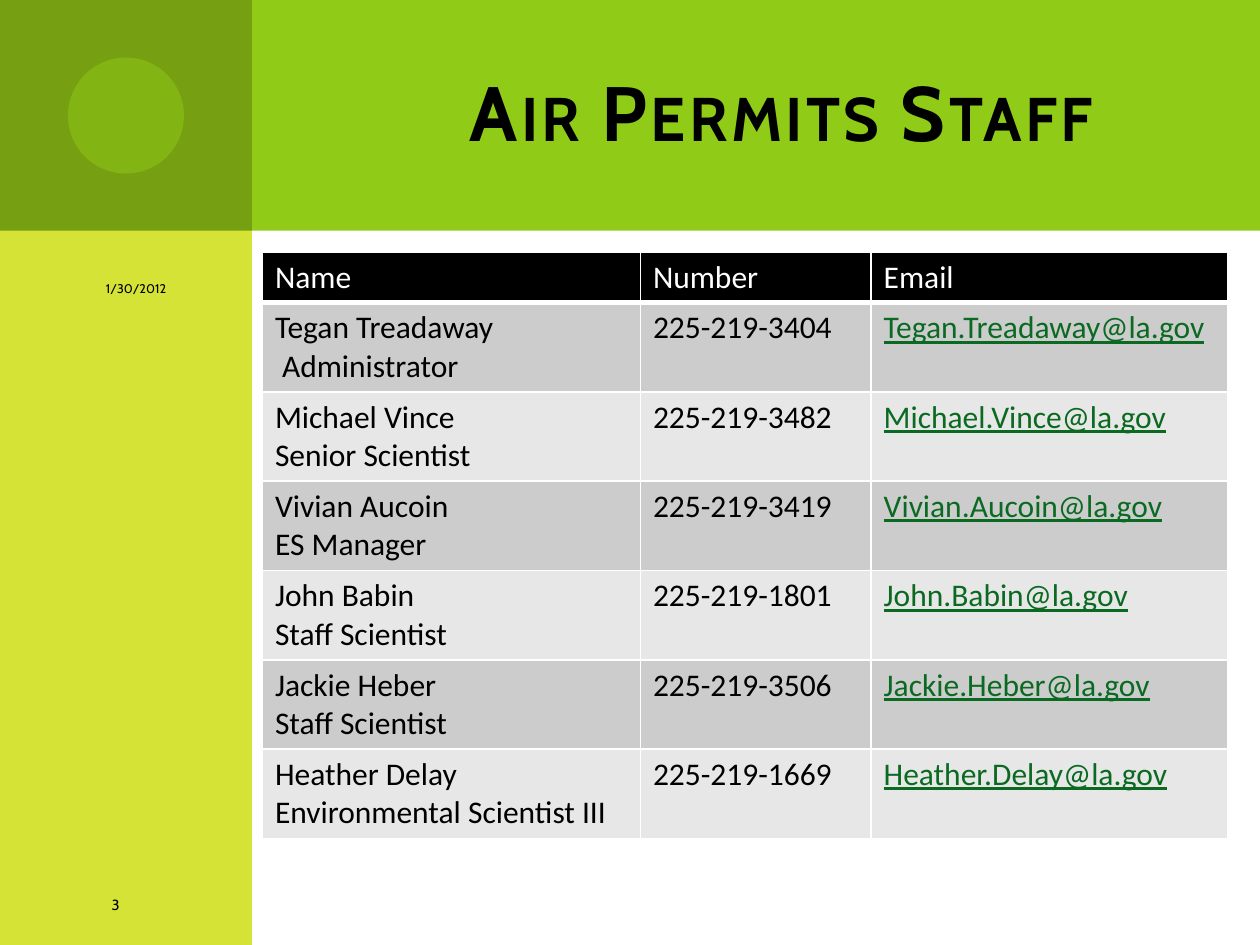
from typing import NamedTuple

from lxml import etree
from pptx import Presentation
from pptx.dml.color import RGBColor
from pptx.enum.shapes import MSO_SHAPE
from pptx.enum.text import MSO_ANCHOR, PP_ALIGN
from pptx.oxml.ns import qn
from pptx.util import Cm, Pt

RECTANGLE, OVAL = MSO_SHAPE.RECTANGLE, MSO_SHAPE.OVAL
LEFT, CENTER, RIGHT = PP_ALIGN.LEFT, PP_ALIGN.CENTER, PP_ALIGN.RIGHT
MIDDLE = MSO_ANCHOR.MIDDLE

BLACK, WHITE = "000000", "FFFFFF"
GREEN, DARK_GREEN, LIME = "8FCB17", "769F11", "D4E336"
EMAIL_GREEN = "0A6A21"
BAND_FILLS = ("CCCCCC", "E7E7E7")
COLUMN_WIDTHS = (7.62, 4.65, 7.19)
HEADER_HEIGHT, ROW_HEIGHT = 1.02, 1.8


class Panel(NamedTuple):
    kind: int
    left: float
    top: float
    width: float
    height: float
    color: str
    opacity: int = 100


class Person(NamedTuple):
    name: str
    role: str
    number: str
    email: str


PANELS = (
    Panel(RECTANGLE, 1.27, 0, 24.13, 4.65, GREEN),
    Panel(RECTANGLE, 0, 0, 5.08, 19.05, LIME),
    Panel(RECTANGLE, 0, 0, 5.08, 4.65, DARK_GREEN),
    Panel(OVAL, 1.37, 1.16, 2.34, 2.34, GREEN, 50),
)

STAFF = (
    Person("Tegan Treadaway", " Administrator", "225-219-3404", "Tegan.Treadaway@la.gov"),
    Person("Michael Vince", "Senior Scientist", "225-219-3482", "Michael.Vince@la.gov"),
    Person("Vivian Aucoin", "ES Manager", "225-219-3419", "Vivian.Aucoin@la.gov"),
    Person("John Babin", "Staff Scientist", "225-219-1801", "John.Babin@la.gov"),
    Person("Jackie Heber", "Staff Scientist", "225-219-3506", "Jackie.Heber@la.gov"),
    Person("Heather Delay", "Environmental Scientist III", "225-219-1669", "Heather.Delay@la.gov"),
)


def set_fill(fill, color: str) -> None:
    fill.solid()
    fill.fore_color.rgb = RGBColor.from_string(color)


def write_text(text_frame, text: str, *, font: str, size: float, color: str = BLACK,
               align=LEFT, bold: bool = False, underline: bool = False,
               small_caps: bool = False, spacing: float = 0) -> None:
    """Write one paragraph per line of text."""
    for index, line in enumerate(text.split("\n")):
        paragraph = text_frame.add_paragraph() if index else text_frame.paragraphs[0]
        paragraph.alignment = align
        run = paragraph.add_run()
        run.text = line
        run.font.name, run.font.size = font, Pt(size)
        run.font.bold, run.font.underline = bold, underline
        set_fill(run.font.fill, color)
        properties = run._r.get_or_add_rPr()
        if small_caps:
            properties.set("cap", "small")
        if spacing:
            properties.set("spc", str(int(spacing * 100)))


def add_panel(slide, panel: Panel) -> None:
    shape = slide.shapes.add_shape(panel.kind, Cm(panel.left), Cm(panel.top),
                                   Cm(panel.width), Cm(panel.height))
    shape.shadow.inherit = False
    shape.line.fill.background()
    set_fill(shape.fill, panel.color)
    if panel.opacity < 100:
        color = shape._element.spPr.find(qn("a:solidFill"))[0]
        etree.SubElement(color, qn("a:alpha")).set("val", str(panel.opacity * 1000))


def add_label(slide, text: str, left: float, top: float, width: float, height: float,
              **text_format) -> None:
    box = slide.shapes.add_textbox(Cm(left), Cm(top), Cm(width), Cm(height))
    box.text_frame.word_wrap = True
    box.text_frame.vertical_anchor = MIDDLE
    write_text(box.text_frame, text, font="Cabin", small_caps=True, **text_format)


def set_borders(cell, bottom: float) -> None:
    properties = cell._tc.get_or_add_tcPr()
    for side, width in (("L", 1), ("R", 1), ("T", 1), ("B", bottom)):
        line = etree.SubElement(properties, qn(f"a:ln{side}"), w=str(Pt(width)))
        solid = etree.SubElement(line, qn("a:solidFill"))
        etree.SubElement(solid, qn("a:srgbClr"), val=WHITE)


def fill_cell(cell, text: str, background: str, bottom: float = 1, **text_format) -> None:
    set_borders(cell, bottom)
    set_fill(cell.fill, background)
    write_text(cell.text_frame, text, font="Calibri", size=18, **text_format)


def add_staff_table(slide) -> None:
    height = HEADER_HEIGHT + ROW_HEIGHT * len(STAFF)
    table = slide.shapes.add_table(len(STAFF) + 1, len(COLUMN_WIDTHS), Cm(5.29), Cm(5.08),
                                   Cm(sum(COLUMN_WIDTHS)), Cm(height)).table
    for column, width in zip(table.columns, COLUMN_WIDTHS):
        column.width = Cm(width)
    for index, row in enumerate(table.rows):
        row.height = Cm(ROW_HEIGHT if index else HEADER_HEIGHT)

    for index, heading in enumerate(("Name", "Number", "Email")):
        fill_cell(table.cell(0, index), heading, BLACK, bottom=3, color=WHITE)
    for index, person in enumerate(STAFF):
        background = BAND_FILLS[index % 2]
        name, number, email = table.rows[index + 1].cells
        fill_cell(name, f"{person.name}\n{person.role}", background)
        fill_cell(number, person.number, background)
        fill_cell(email, person.email, background, color=EMAIL_GREEN, underline=True)


def main() -> None:
    presentation = Presentation()
    presentation.slide_width, presentation.slide_height = Cm(25.4), Cm(19.05)
    slide = presentation.slides.add_slide(presentation.slide_layouts[6])

    # Coloured background panels
    for panel in PANELS:
        add_panel(slide, panel)

    # Title and staff list
    add_label(slide, "Air Permits Staff", 1.9, 0.64, 21.6, 3.18,
              size=44, bold=True, spacing=2, align=RIGHT)
    add_staff_table(slide)

    # Date and slide number
    add_label(slide, "1/30/2012", 1.48, 5.29, 2.12, 1.02, size=9, align=RIGHT)
    add_label(slide, "3", 1.06, 17.78, 2.54, 0.85, size=10.5, align=CENTER)

    presentation.save("out.pptx")


if __name__ == "__main__":
    main()
